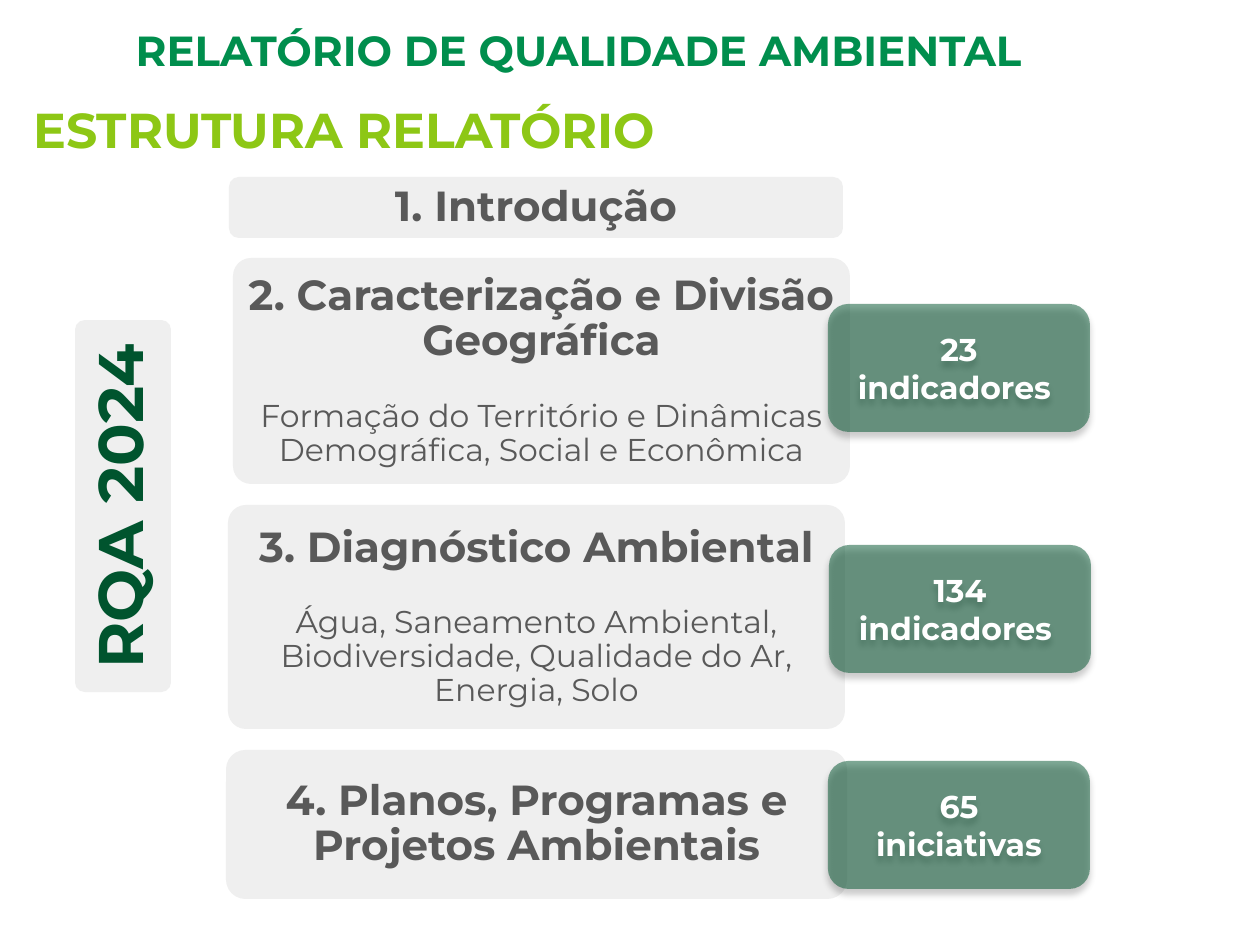
from dataclasses import dataclass

from lxml import etree
from pptx import Presentation
from pptx.dml.color import RGBColor
from pptx.enum.shapes import MSO_SHAPE
from pptx.enum.text import MSO_ANCHOR, MSO_AUTO_SIZE, PP_ALIGN
from pptx.oxml.ns import qn
from pptx.util import Emu, Pt

ROUNDED = MSO_SHAPE.ROUNDED_RECTANGLE
MIDDLE, TOP = MSO_ANCHOR.MIDDLE, MSO_ANCHOR.TOP
CENTER, LEFT = PP_ALIGN.CENTER, PP_ALIGN.LEFT
NO_FIT = MSO_AUTO_SIZE.NONE


@dataclass(frozen=True)
class Theme:
    font: str = "Montserrat"
    green: str = "008E4D"
    lime: str = "8DC715"
    dark_green: str = "00542E"
    grey_text: str = "595959"
    panel: str = "EFEFEF"
    white: str = "FFFFFF"
    banner: int = 36
    subtitle: int = 28
    heading: int = 24
    body: int = 18


THEME = Theme()
PX = 914400 / 126


def add_text(para, text, size, color, bold=True, align=CENTER, spacing=None):
    para.alignment = align
    para.line_spacing = spacing
    span = para.add_run()
    span.text = text
    span.font.name = THEME.font
    span.font.size = Pt(size)
    span.font.bold = bold
    span.font.color.rgb = RGBColor.from_string(color)


def add_card(page, bounds, radius, color):
    """Rounded rectangle without line or shadow; bounds and radius in px."""
    box = page.shapes.add_shape(ROUNDED, *[Emu(round(v * PX)) for v in bounds])
    box.adjustments[0] = round(radius / min(bounds[2:]), 2)
    box.shadow.inherit = False
    box.fill.solid()
    box.fill.fore_color.rgb = RGBColor.from_string(color)
    box.line.fill.background()
    box.text_frame.word_wrap = True
    box.text_frame.vertical_anchor = MIDDLE
    return box


deck = Presentation()
deck.slide_width, deck.slide_height = Emu(round(1260 * PX)), Emu(round(945 * PX))
page = deck.slides.add_slide(deck.slide_layouts[5])

# Title and subtitle
title = page.shapes.title
subtitle = page.shapes.add_textbox(0, 0, 0, 0)
headers = [
    (title, (123, 18, 1106, 63), "RELATÓRIO DE QUALIDADE AMBIENTAL",
     THEME.heading, THEME.green, 1.0),
    (subtitle, (21, 100, 784, 67), "ESTRUTURA RELATÓRIO",
     THEME.subtitle, THEME.lime, 0.9),
]
for box, bounds, text, size, color, spacing in headers:
    box.left, box.top, box.width, box.height = [Emu(round(v * PX)) for v in bounds]
    frame = box.text_frame
    frame.word_wrap = True
    frame.auto_size = NO_FIT
    frame.vertical_anchor = TOP
    add_text(frame.paragraphs[0], text, size, color, align=LEFT, spacing=spacing)

# Vertical report label
label = add_card(page, (-63, 458, 372, 96), 10, THEME.panel)
label.rotation = 270
add_text(label.text_frame.paragraphs[0], "RQA 2024", THEME.banner,
         THEME.dark_green, spacing=0.9)

# Chapter panels
chapters = [
    ((229, 177, 614, 61), 10, "1. Introdução", None),
    ((233, 258, 617, 226), 19, "2. Caracterização e Divisão Geográfica",
     "Formação do Território e Dinâmicas Demográfica, Social e Econômica"),
    ((228, 505, 617, 224), 19, "3. Diagnóstico Ambiental",
     "Água, Saneamento Ambiental, Biodiversidade, Qualidade do Ar, Energia, Solo"),
    ((226, 750, 621, 149), 19, "4. Planos, Programas e Projetos Ambientais", None),
]
for bounds, radius, heading, topics in chapters:
    frame = add_card(page, bounds, radius, THEME.panel).text_frame
    frame.margin_left = frame.margin_right = 0
    frame.margin_top = frame.margin_bottom = 0
    add_text(frame.paragraphs[0], heading, THEME.heading, THEME.grey_text, spacing=0.9)
    if topics:
        para = frame.add_paragraph()
        para.space_before = Pt(20)
        add_text(para, topics, THEME.body, THEME.grey_text, bold=False, spacing=0.9)

# Translucent count badges with a soft shadow below
badges = [
    (828, 304, ["23 indicadores "]),
    (829, 545, ["134 indicadores "]),
    (828, 761, ["65", " iniciativas "]),
]
for left, top, lines in badges:
    badge = add_card(page, (left, top, 262, 128), 21, THEME.dark_green)
    properties = badge.fill._xPr
    fill_color = properties.find(qn("a:solidFill")).find(qn("a:srgbClr"))
    etree.SubElement(fill_color, qn("a:alpha"), val="50000")
    shadow = etree.SubElement(properties.find(qn("a:effectLst")), qn("a:outerShdw"),
                              blurRad=str(Pt(4)), dist=str(Pt(3)), dir="5400000",
                              rotWithShape="0")
    shadow_color = etree.SubElement(shadow, qn("a:srgbClr"), val="000000")
    etree.SubElement(shadow_color, qn("a:alpha"), val="40000")
    frame = badge.text_frame
    for index, line in enumerate(lines):
        para = frame.add_paragraph() if index else frame.paragraphs[0]
        add_text(para, line, THEME.body, THEME.white)

deck.save("out.pptx")
